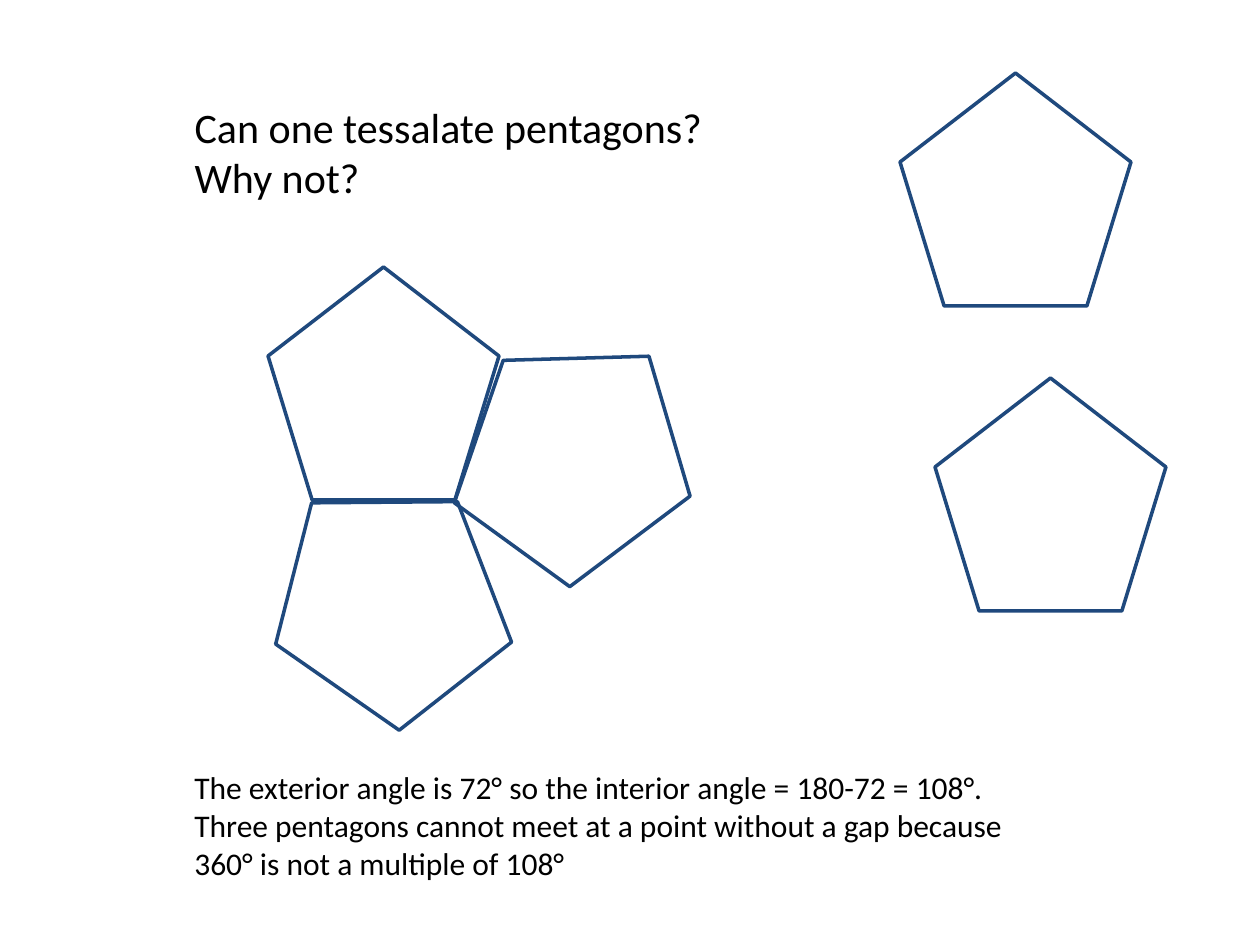
from pptx import Presentation
from pptx.dml.color import RGBColor
from pptx.enum.shapes import MSO_SHAPE
from pptx.enum.text import MSO_ANCHOR, MSO_AUTO_SIZE, PP_ALIGN
from pptx.util import Pt

EMU_PER_PX = 914400 / 126
PENTAGON = MSO_SHAPE.REGULAR_PENTAGON
TOP = MSO_ANCHOR.TOP
LEFT = PP_ALIGN.LEFT
FIT_SHAPE = MSO_AUTO_SIZE.SHAPE_TO_FIT_TEXT
TITLE_ONLY = 5

NAVY = RGBColor(0x1F, 0x49, 0x7D)
BLACK = RGBColor(0, 0, 0)
FONT = "Calibri"

PENTAGON_WIDTH, PENTAGON_HEIGHT = 231, 233
# left, top, rotation in degrees
PENTAGONS = [
    (268, 267, 0),
    (268, 478, 321.9),
    (935, 378, 0),
    (465, 334, 36),
    (900, 73, 0),
]
QUESTIONS = ["Can one tessalate pentagons?", "Why not?"]
EXPLANATION = [
    "The exterior angle is 72° so the interior angle = 180-72 = 108°. "
    "Three pentagons cannot meet at a point without a gap because "
    "360° is not a multiple of 108°"
]


def px(length):
    return round(length * EMU_PER_PX)


def add_pentagon(page, left, top, rotation):
    pentagon = page.shapes.add_shape(
        PENTAGON, px(left), px(top), px(PENTAGON_WIDTH), px(PENTAGON_HEIGHT))
    pentagon.rotation = rotation
    pentagon.shadow.inherit = False
    pentagon.fill.background()
    pentagon.line.color.rgb = NAVY
    pentagon.line.width = Pt(2)


def write_text(box, lines, size):
    frame = box.text_frame
    frame.word_wrap = True
    frame.auto_size = FIT_SHAPE
    frame.vertical_anchor = TOP
    for index, line in enumerate(lines):
        para = frame.add_paragraph() if index else frame.paragraphs[0]
        para.alignment = LEFT
        span = para.add_run()
        span.text = line
        span.font.name = FONT
        span.font.size = Pt(size)
        span.font.color.rgb = BLACK


def add_title(page, left, top, width, height):
    title = page.shapes.title
    title.left, title.top = px(left), px(top)
    title.width, title.height = px(width), px(height)
    write_text(title, QUESTIONS, 24)


def add_explanation(page, left, top, width, height):
    box = page.shapes.add_textbox(px(left), px(top), px(width), px(height))
    write_text(box, EXPLANATION, 18)


def main():
    deck = Presentation()
    deck.slide_width, deck.slide_height = px(1260), px(945)
    page = deck.slides.add_slide(deck.slide_layouts[TITLE_ONLY])
    for left, top, rotation in PENTAGONS:
        add_pentagon(page, left, top, rotation)
    add_explanation(page, 182, 762, 868, 127)
    add_title(page, 182, 95, 561, 115)
    deck.save("out.pptx")


if __name__ == "__main__":
    main()
